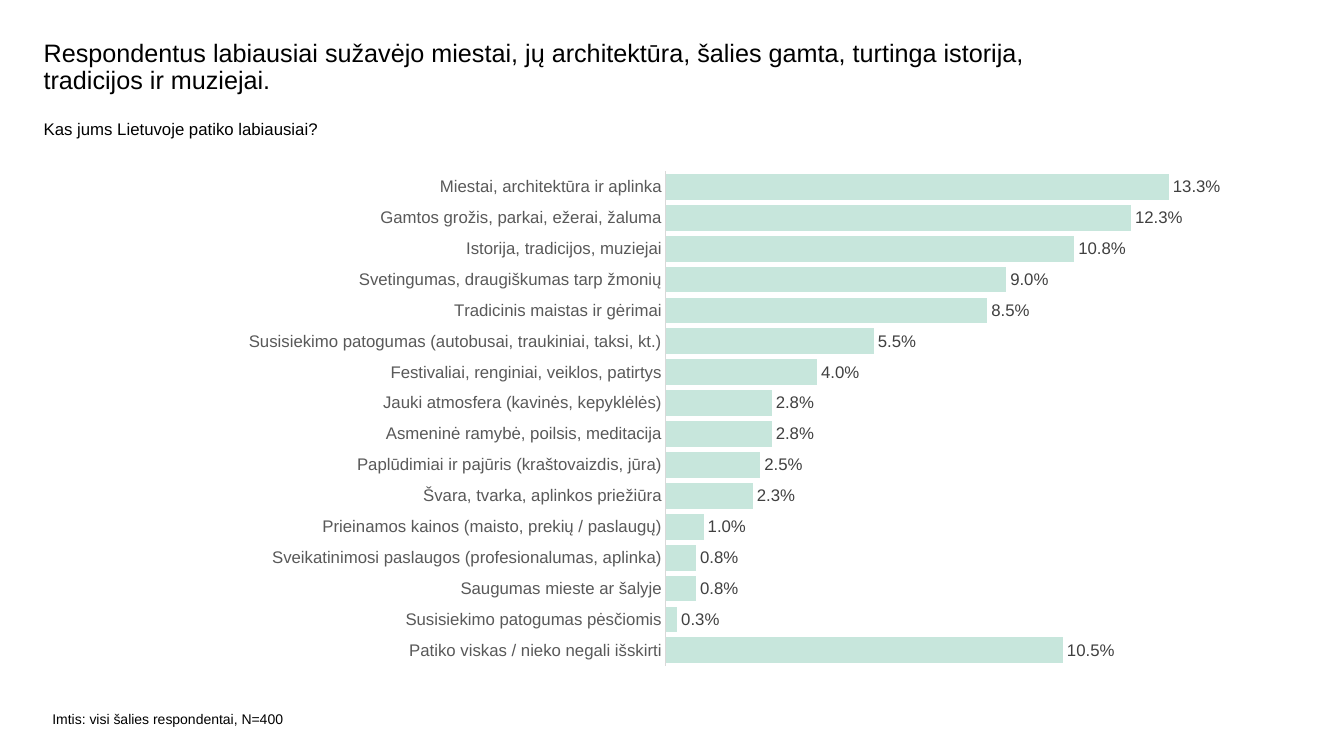
from dataclasses import dataclass

from lxml.etree import SubElement
from pptx import Presentation
from pptx.chart.data import CategoryChartData as ChartData
from pptx.dml.color import RGBColor as RGB
from pptx.enum.chart import XL_CHART_TYPE as Kind
from pptx.enum.chart import XL_LABEL_POSITION as Place
from pptx.enum.chart import XL_TICK_MARK as Tick
from pptx.oxml.ns import qn
from pptx.util import Cm, Pt


@dataclass(frozen=True)
class Theme:
    font: str = "Arial"
    ink: RGB = RGB(0, 0, 0)
    bar: RGB = RGB(0xC7, 0xE6, 0xDC)
    axis: RGB = RGB(0xD9, 0xD9, 0xD9)
    name: RGB = RGB(0x59, 0x59, 0x59)
    value: RGB = RGB(0x40, 0x40, 0x40)
    title: Pt = Pt(18)
    body: Pt = Pt(12)
    note: Pt = Pt(10)


THEME = Theme()

# Answers from the top bar to the bottom one
ANSWERS = [
    ("Miestai, architektūra ir aplinka", 0.133),
    ("Gamtos grožis, parkai, ežerai, žaluma", 0.123),
    ("Istorija, tradicijos, muziejai", 0.108),
    ("Svetingumas, draugiškumas tarp žmonių", 0.09),
    ("Tradicinis maistas ir gėrimai", 0.085),
    ("Susisiekimo patogumas (autobusai, traukiniai, taksi, kt.)", 0.055),
    ("Festivaliai, renginiai, veiklos, patirtys", 0.04),
    ("Jauki atmosfera (kavinės, kepyklėlės)", 0.028),
    ("Asmeninė ramybė, poilsis, meditacija", 0.028),
    ("Paplūdimiai ir pajūris (kraštovaizdis, jūra)", 0.025),
    ("Švara, tvarka, aplinkos priežiūra", 0.023),
    ("Prieinamos kainos (maisto, prekių / paslaugų)", 0.01),
    ("Sveikatinimosi paslaugos (profesionalumas, aplinka)", 0.008),
    ("Saugumas mieste ar šalyje", 0.008),
    ("Susisiekimo patogumas pėsčiomis", 0.003),
    ("Patiko viskas / nieko negali išskirti", 0.105),
]


def set_font(font, size, color):
    font.name = THEME.font
    font.size = size
    font.color.rgb = color


def add_text(slide, text, box, size, spacing=None):
    frame = slide.shapes.add_textbox(*map(Cm, box)).text_frame
    frame.word_wrap = True
    frame.margin_left = frame.margin_right = 0
    frame.margin_top = frame.margin_bottom = 0
    para = frame.paragraphs[0]
    para.text = text
    para.line_spacing = spacing
    set_font(para.font, size, THEME.ink)


def set_plot(chart, **shares):
    """Fix the inner plot area as shares of the chart's size."""
    area = chart._chartSpace.chart.plotArea
    for old in area.findall(qn("c:layout")):
        area.remove(old)
    layout = SubElement(area, qn("c:layout"))
    area.insert(0, layout)
    manual = SubElement(layout, qn("c:manualLayout"))
    rules = {"layoutTarget": "inner", "xMode": "edge", "yMode": "edge", **shares}
    for tag, val in rules.items():
        SubElement(manual, qn(f"c:{tag}")).set("val", str(val))


def add_bars(slide, answers, box):
    # Bar charts stack upwards, so the last answer goes in first
    data = ChartData(number_format="0.0%")
    names, values = zip(*reversed(answers))
    data.categories = names
    data.add_series("Series 1", values)
    chart = slide.shapes.add_chart(Kind.BAR_CLUSTERED, *map(Cm, box), data).chart
    set_font(chart.font, THEME.note, THEME.ink)
    chart.has_legend = False
    chart.has_title = False
    set_plot(chart, x=0.448, y=0.02, w=0.528, h=0.96)

    # Axes
    cat = chart.category_axis
    cat.major_tick_mark = cat.minor_tick_mark = Tick.NONE
    cat.format.line.color.rgb = THEME.axis
    cat.format.line.width = Pt(0.75)
    set_font(cat.tick_labels.font, THEME.body, THEME.name)
    scale = chart.value_axis
    scale.minimum_scale, scale.maximum_scale = 0, 0.14
    scale.has_major_gridlines = False
    scale.visible = False

    # Bars and their labels
    plot = chart.plots[0]
    plot.gap_width = 20
    plot.vary_by_categories = False
    fill = plot.series[0].format.fill
    fill.solid()
    fill.fore_color.rgb = THEME.bar
    plot.has_data_labels = True
    labels = plot.data_labels
    labels.show_value = True
    labels.number_format = "0.0%"
    labels.number_format_is_linked = False
    labels.position = Place.OUTSIDE_END
    set_font(labels.font, THEME.body, THEME.value)


def main():
    deck = Presentation()
    deck.slide_width, deck.slide_height = Cm(33.87), Cm(19.05)
    slide = deck.slides.add_slide(deck.slide_layouts[6])

    # Heading and question
    add_text(
        slide,
        "Respondentus labiausiai sužavėjo miestai, jų architektūra, "
        "šalies gamta, turtinga istorija, tradicijos ir muziejai.",
        (1.1, 1.02, 27.05, 1.52), THEME.title, 0.9,
    )
    add_text(slide, "Kas jums Lietuvoje patiko labiausiai?",
             (1.1, 3, 30.2, 1.55), THEME.body)

    # Chart and sample note
    add_bars(slide, ANSWERS, (5.46, 4.06, 25.3, 12.98))
    add_text(slide, "Imtis: visi šalies respondentai, N=400",
             (1.32, 17.9, 9.8, 0.7), THEME.note)

    deck.save("out.pptx")


if __name__ == "__main__":
    main()
